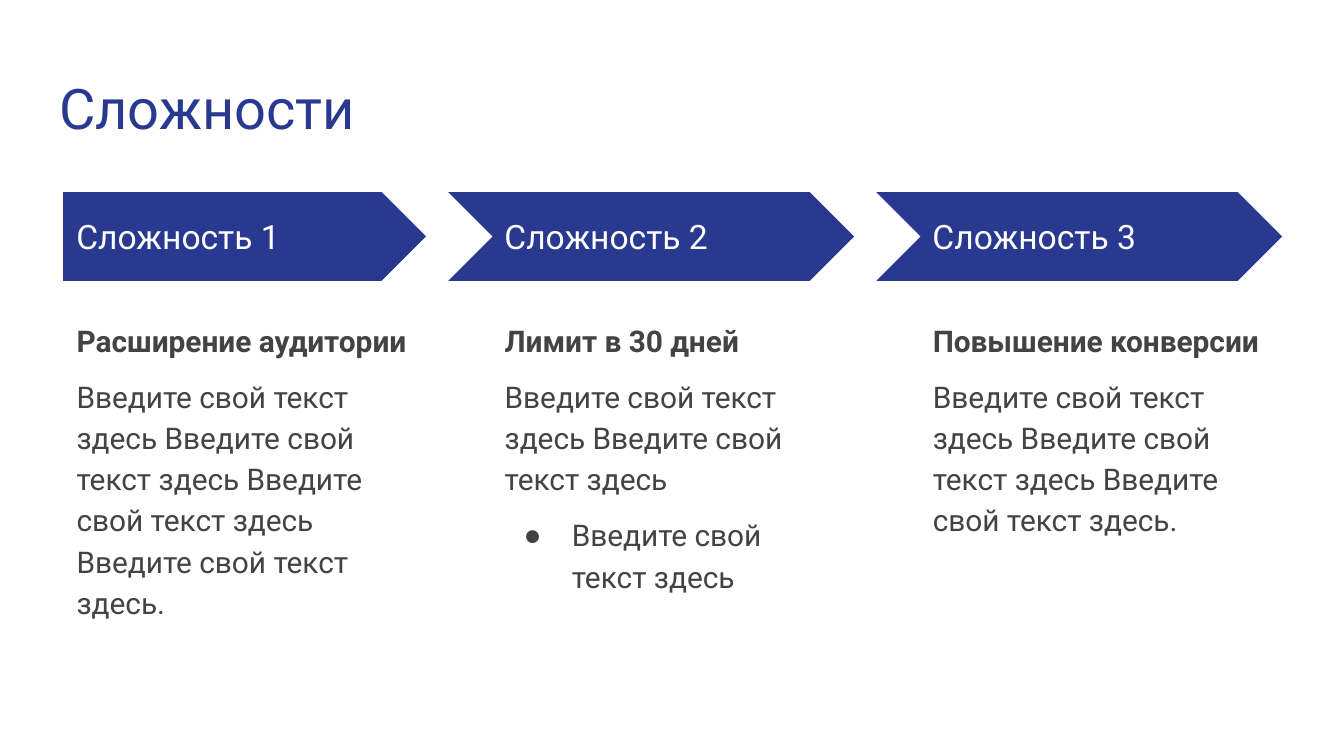
"""Build a slide with three challenges under a row of arrows."""
from dataclasses import dataclass

from lxml.etree import SubElement
from pptx import Presentation
from pptx.dml.color import RGBColor
from pptx.enum.shapes import MSO_SHAPE
from pptx.enum.text import MSO_ANCHOR as Anchor, MSO_AUTO_SIZE as AutoSize, PP_ALIGN as Align
from pptx.oxml.ns import qn
from pptx.util import Inches, Pt

TITLE = "Сложности"
PHRASE = "Введите свой текст здесь"
COLUMNS = [
    {"label": "Сложность 1", "heading": "Расширение аудитории",
     "text": " ".join([PHRASE] * 4) + ".", "bullets": []},
    {"label": "Сложность 2", "heading": "Лимит в 30 дней",
     "text": " ".join([PHRASE] * 2), "bullets": [PHRASE]},
    {"label": "Сложность 3", "heading": "Повышение конверсии",
     "text": " ".join([PHRASE] * 3) + ".", "bullets": []},
]


@dataclass(frozen=True)
class Theme:
    font: str = "Roboto"
    bullet_font: str = "Arial"
    blue: str = "2A3990"
    gray: str = "434343"
    white: str = "FFFFFF"
    title: int = 30
    label: int = 18
    body: int = 16


THEME = Theme()
WIDTH = 10
HEIGHT = WIDTH * 9 / 16
LEFT, LAST_LEFT, COLUMN_WIDTH = 0.47, 6.84, 2.7
PITCH = (LAST_LEFT - LEFT) / (len(COLUMNS) - 1)
ARROW_TOP, ARROW_HEIGHT, NOTCH = 1.43, 0.66, 0.32
LABEL_WIDTH, LABEL_HEIGHT = 2.47, 0.34
BODY_TOP, BODY_HEIGHT = 2.26, 2.9
INSET, LINE_SPACING, GAP = 0.1, 1.15, 8
BULLET_INDENT, BULLET_HANG = 0.5, -0.36


def place(shape, left, top, width, height):
    shape.left, shape.top = Inches(left), Inches(top)
    shape.width, shape.height = Inches(width), Inches(height)


def prepare(shape, anchor=Anchor.TOP):
    frame = shape.text_frame
    frame.word_wrap = True
    frame.auto_size = AutoSize.NONE
    frame.vertical_anchor = anchor
    frame.margin_left = frame.margin_right = Inches(INSET)
    frame.margin_top = frame.margin_bottom = Inches(INSET)
    return frame


def write(paragraph, text, size, color, bold=False, spacing=1.0, before=0, after=0, bullet=False):
    paragraph.alignment = Align.LEFT
    paragraph.line_spacing = spacing
    paragraph.space_before, paragraph.space_after = Pt(before), Pt(after)
    properties = paragraph._p.get_or_add_pPr()
    properties.set("marL", str(Inches(BULLET_INDENT if bullet else 0)))
    properties.set("indent", str(Inches(BULLET_HANG if bullet else 0)))
    if bullet:
        bullet_color = SubElement(properties, qn("a:buClr"))
        SubElement(bullet_color, qn("a:srgbClr"), val=color)
        SubElement(properties, qn("a:buFont"), typeface=THEME.bullet_font)
        SubElement(properties, qn("a:buChar"), char="●")
    else:
        SubElement(properties, qn("a:buNone"))
    run = paragraph.add_run()
    run.text = text
    run.font.name, run.font.size, run.font.bold = THEME.font, Pt(size), bold
    run.font.color.rgb = RGBColor.from_string(color)


def add_arrow(slide, index, left):
    kind, notch = (MSO_SHAPE.CHEVRON, NOTCH) if index else (MSO_SHAPE.PENTAGON, 0)
    arrow = slide.shapes.add_shape(
        kind, Inches(left - notch), Inches(ARROW_TOP),
        Inches(COLUMN_WIDTH + notch), Inches(ARROW_HEIGHT))
    arrow.adjustments[0] = 0.5
    arrow.shadow.inherit = False
    arrow.fill.solid()
    arrow.fill.fore_color.rgb = RGBColor.from_string(THEME.blue)
    arrow.line.fill.background()


def add_label(slide, text, left):
    top = ARROW_TOP + (ARROW_HEIGHT - LABEL_HEIGHT) / 2
    label = slide.shapes.add_textbox(0, 0, 0, 0)
    place(label, left, top, LABEL_WIDTH, LABEL_HEIGHT)
    write(prepare(label, Anchor.MIDDLE).paragraphs[0], text, THEME.label, THEME.white)


def fill_body(body, column, left):
    place(body, left, BODY_TOP, COLUMN_WIDTH, BODY_HEIGHT)
    frame = prepare(body)
    style = {"size": THEME.body, "color": THEME.gray, "spacing": LINE_SPACING}
    write(frame.paragraphs[0], column["heading"], bold=True, **style)
    items = [(column["text"], False)] + [(text, True) for text in column["bullets"]]
    for number, (text, bullet) in enumerate(items, 1):
        after = GAP if number == len(items) else 0
        write(frame.add_paragraph(), text, before=GAP, after=after, bullet=bullet, **style)


def main():
    presentation = Presentation()
    presentation.slide_width, presentation.slide_height = Inches(WIDTH), Inches(HEIGHT)
    slide = presentation.slides.add_slide(presentation.slide_layouts.get_by_name("Comparison"))
    title, *bodies = list(slide.placeholders)
    place(title, 0.34, 0.45, 9.32, 0.66)
    write(prepare(title).paragraphs[0], TITLE, THEME.title, THEME.blue)
    for index, (column, body) in enumerate(zip(COLUMNS, bodies)):
        left = LEFT + index * PITCH
        add_arrow(slide, index, left)
        add_label(slide, column["label"], left)
        fill_body(body, column, left)
    for spare in bodies[len(COLUMNS):]:
        spare.element.getparent().remove(spare.element)
    presentation.save("out.pptx")


if __name__ == "__main__":
    main()
